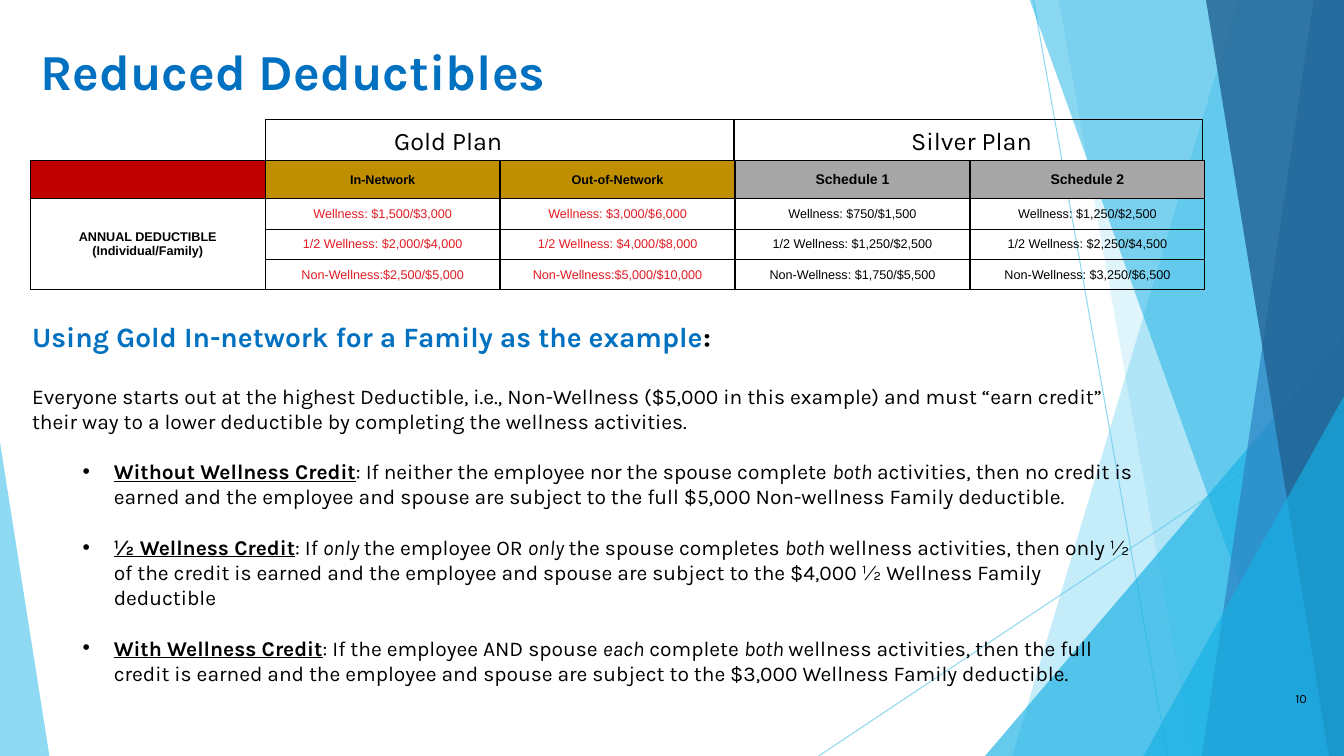
import lxml.etree
import pptx
import pptx.dml.color
import pptx.enum.shapes
import pptx.enum.text
import pptx.oxml
import pptx.oxml.ns
import pptx.util

Inches = pptx.util.Inches
Pt = pptx.util.Pt
RGBColor = pptx.dml.color.RGBColor
Align = pptx.enum.text.PP_ALIGN
Anchor = pptx.enum.text.MSO_ANCHOR
Shapes = pptx.enum.shapes.MSO_SHAPE
qn = pptx.oxml.ns.qn

BLACK = RGBColor(0x00, 0x00, 0x00)
BLUE = RGBColor(0x00, 0x70, 0xC0)
SKY = RGBColor(0x5F, 0xCB, 0xEF)
CYAN = RGBColor(0x17, 0xB0, 0xE4)
STEEL = RGBColor(0x2E, 0x83, 0xC3)
NAVY = RGBColor(0x22, 0x62, 0x92)
DARK_RED = RGBColor(0xC0, 0x00, 0x00)
RED = RGBColor(0xE1, 0x1B, 0x22)
GOLD = RGBColor(0xBF, 0x8F, 0x00)
SILVER = RGBColor(0xA6, 0xA6, 0xA6)


def write(para, text, size=15, font="Karla", color=BLACK, bold=False, italic=False,
          underline=False, align=None):
    span = para.add_run()
    span.text = text
    span.font.name = font
    span.font.size = Pt(size)
    span.font.color.rgb = color
    span.font.bold = bold
    span.font.italic = italic
    span.font.underline = underline
    if align is not None:
        para.alignment = align


def set_opacity(shape, percent):
    for color in shape._element.spPr.iter(qn("a:srgbClr")):
        lxml.etree.SubElement(color, qn("a:alpha"), val=str(percent * 1000))


deck = pptx.Presentation()
deck.slide_width = Inches(13.33)
deck.slide_height = Inches(7.5)
page = deck.slides.add_slide(deck.slide_layouts[6])

# Thin background lines
for x1, y1, x2, y2 in [(10.25, 0, 11.58, 7.5), (13.33, 4.03, 8.12, 7.5)]:
    ray = page.shapes.add_connector(pptx.enum.shapes.MSO_CONNECTOR.STRAIGHT,
                                    Inches(x1), Inches(y1), Inches(x2), Inches(y2))
    ray.line.color.rgb = SKY
    ray.line.width = Pt(0.75)
    set_opacity(ray, 70)
    lxml.etree.SubElement(ray._element.spPr, qn("a:effectLst"))

# Facets: bands from (top x, bottom x) to the right edge,
# and triangles (left, top, width, height, apex)
facets = [
    ((12.28, 10.04), SKY, 36),
    ((10.5, 11.83), SKY, 20),
    ((9.77, 3.33, 3.56, 4.17, 1), CYAN, 66),
    ((10.21, 12.91), CYAN, 50),
    ((13.03, 11.92), STEEL, 70),
    ((11.96, 13.18), NAVY, 80),
    ((11.34, 3.93, 1.99, 3.57, 1), CYAN, 66),
    ((0, 4.39, 0.49, 3.11, 0), SKY, 70),
]
for outline, color, opacity in facets:
    if len(outline) == 2:
        top_x, bottom_x = outline
        builder = page.shapes.build_freeform(Inches(top_x), Inches(-0.01))
        corners = [(13.33, -0.01), (13.33, 7.5), (bottom_x, 7.5)]
        builder.add_line_segments([(Inches(x), Inches(y)) for x, y in corners], close=True)
        facet = builder.convert_to_shape()
    else:
        *place, apex = outline
        facet = page.shapes.add_shape(Shapes.ISOSCELES_TRIANGLE, *map(Inches, place))
        facet.adjustments[0] = apex
    facet.shadow.inherit = False
    facet.fill.solid()
    facet.fill.fore_color.rgb = color
    facet.line.fill.background()
    set_opacity(facet, opacity)

# Title
box = page.shapes.add_textbox(Inches(0.3), Inches(0.35), Inches(11.11), Inches(0.68))
box.text_frame.word_wrap = True
write(box.text_frame.paragraphs[0], "Reduced Deductibles", size=36, color=BLUE, bold=True)

# Explanation: space before, bulleted, spans of (text, format)
HEADING = {"size": 20, "bold": True}
TERM = {"bold": True, "underline": True}
ITALIC = {"italic": True}
explanation = [
    (0, False, [("Using Gold In-network for a Family as the example", {**HEADING, "color": BLUE}),
                (":", HEADING)]),
    (21.5, False, [("Everyone starts out at the highest Deductible, i.e., Non-Wellness ($5,000 in this "
                    "example) and must “earn credit” their way to a lower deductible by completing "
                    "the wellness activities.", {})]),
    (18, True, [("Without Wellness Credit", TERM),
                (": If neither the employee nor the spouse complete ", {}), ("both", ITALIC),
                (" activities, then no credit is earned and the employee and spouse are subject to "
                 "the full $5,000 Non-wellness Family deductible.", {})]),
    (18, True, [("½ Wellness Credit", TERM), (": If ", {}), ("only ", ITALIC),
                ("the employee OR ", {}), ("only ", ITALIC), ("the spouse completes ", {}),
                ("both ", ITALIC),
                ("wellness activities, then only ½ of the credit is earned and the employee and "
                 "spouse are subject to the $4,000 ½ Wellness Family deductible", {})]),
    (18, True, [("With Wellness Credit", TERM), (": If the employee AND spouse ", {}),
                ("each", ITALIC), (" complete ", {}), ("both ", ITALIC),
                ("wellness activities, then the full credit is earned and the employee and spouse "
                 "are subject to the $3,000 Wellness Family deductible.", {})]),
]
box = page.shapes.add_textbox(Inches(0.22), Inches(3.12), Inches(11.19), Inches(3.74))
box.text_frame.word_wrap = True
for index, (gap, bulleted, spans) in enumerate(explanation):
    para = box.text_frame.add_paragraph() if index else box.text_frame.paragraphs[0]
    para.space_before = Pt(gap)
    for text, style in spans:
        write(para, text, **style)
    if bulleted:
        para.level = 1
        properties = para._p.get_or_add_pPr()
        properties.set("marL", str(Inches(0.81)))
        properties.set("indent", str(Inches(-0.31)))
        lxml.etree.SubElement(properties, qn("a:buFont"), typeface="Arial")
        lxml.etree.SubElement(properties, qn("a:buChar"), char="•")

# Plan names above the table
for name, left, inset, align in [("Gold Plan", 2.63, 1.28, Align.LEFT),
                                 ("Silver Plan", 7.28, 0.16, Align.CENTER)]:
    box = page.shapes.add_shape(Shapes.RECTANGLE, Inches(left), Inches(1.19),
                                Inches(4.65), Inches(0.4))
    box.shadow.inherit = False
    box.fill.background()
    box.line.color.rgb = BLACK
    box.line.width = Pt(0.75)
    box.text_frame.margin_left = Inches(inset)
    box.text_frame.vertical_anchor = Anchor.TOP
    write(box.text_frame.paragraphs[0], name, size=18, align=align)

# Deductible table
rows = [
    ["", "In-Network", "Out-of-Network", "Schedule 1", "Schedule 2"],
    ["ANNUAL DEDUCTIBLE (Individual/Family)", "Wellness: $1,500/$3,000", "Wellness: $3,000/$6,000",
     "Wellness: $750/$1,500", "Wellness: $1,250/$2,500"],
    ["", "1/2 Wellness: $2,000/$4,000", "1/2 Wellness: $4,000/$8,000",
     "1/2 Wellness: $1,250/$2,500", "1/2 Wellness: $2,250/$4,500"],
    ["", "Non-Wellness:$2,500/$5,000", "Non-Wellness:$5,000/$10,000",
     "Non-Wellness: $1,750/$5,500", "Non-Wellness: $3,250/$6,500"],
]
header_fills = [DARK_RED, GOLD, GOLD, SILVER, SILVER]
table = page.shapes.add_table(4, 5, Inches(0.3), Inches(1.59), Inches(11.64), Inches(1.29)).table
table.first_row = False
table.horz_banding = False
for column in table.columns:
    column.width = Inches(2.33)
for r, texts in enumerate(rows):
    table.rows[r].height = Inches(0.3 if r else 0.38)
    for c, text in enumerate(texts):
        cell = table.cell(r, c)
        cell.vertical_anchor = Anchor.MIDDLE
        cell.margin_left = cell.margin_right = cell.margin_top = Inches(0.01)
        cell.margin_bottom = 0
        for side in ["L", "R", "T", "B"]:
            inner = c > 0 and ((side == "T" and r > 1) or (side == "B" and r in (1, 2)))
            border = lxml.etree.SubElement(cell._tc.get_or_add_tcPr(), qn("a:ln" + side),
                                           w=str(Pt(0.5 if inner else 1)))
            fill = lxml.etree.SubElement(border, qn("a:solidFill"))
            lxml.etree.SubElement(fill, qn("a:srgbClr"), val=str(BLACK))
        if r == 0:
            cell.fill.solid()
            cell.fill.fore_color.rgb = header_fills[c]
        else:
            cell.fill.background()
        if text:
            write(cell.text_frame.paragraphs[0], text, font="Arial", align=Align.CENTER,
                  size=10 if r == 0 and c > 2 else 9, bold=r == 0 or c == 0,
                  color=RED if r and c in (1, 2) else BLACK)
        else:
            cell.text_frame.paragraphs[0].font.size = Pt(9)
table.cell(1, 0).merge(table.cell(3, 0))

# Page number
box = page.shapes.add_textbox(Inches(12.31), Inches(6.73), Inches(0.75), Inches(0.4))
box.text_frame.word_wrap = True
box.text_frame.vertical_anchor = Anchor.MIDDLE
write(box.text_frame.paragraphs[0], "10", size=9, align=Align.RIGHT)

deck.save("out.pptx")
